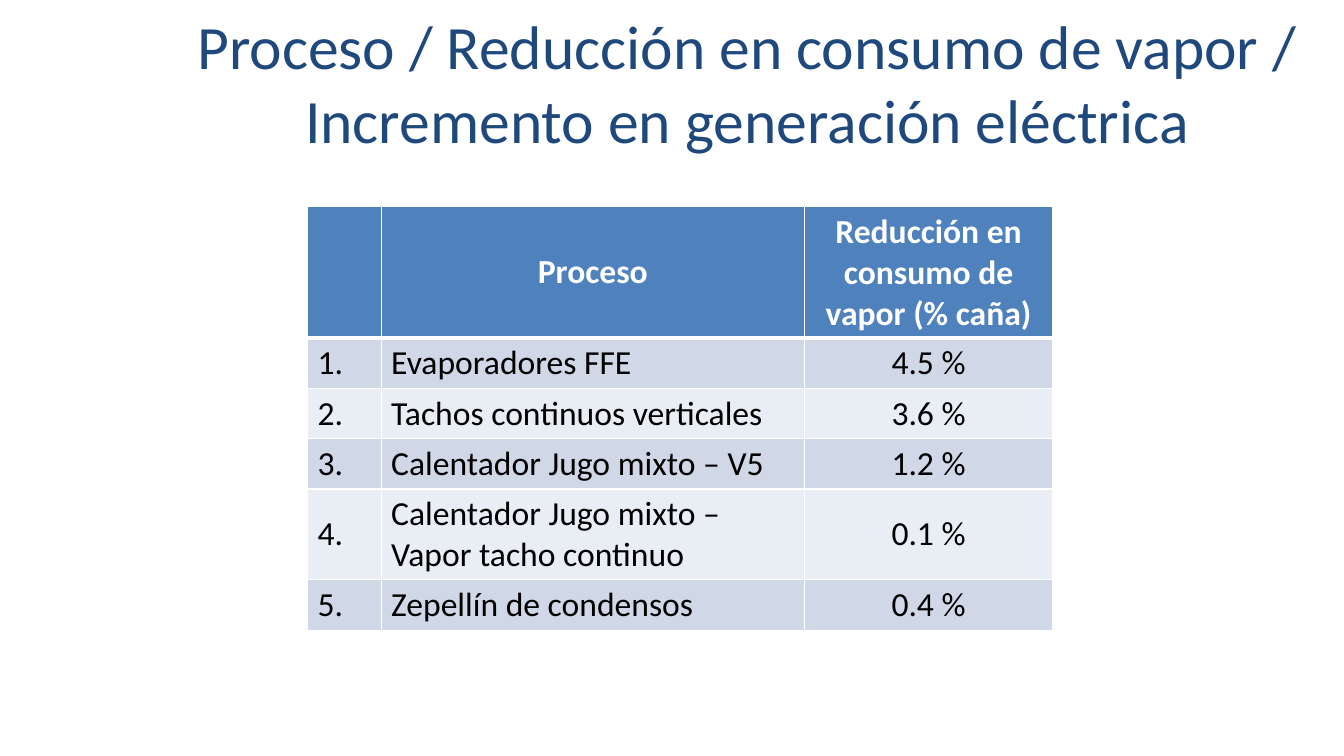
import pptx
import pptx.dml.color
import pptx.enum.text
import pptx.oxml
import pptx.oxml.ns
import pptx.util

SLIDE_WIDTH, SLIDE_HEIGHT = 13.33, 7.5
FONT = "Calibri"
WHITE, BLACK, NAVY, BLUE = "FFFFFF", "000000", "1F497D", "4F81BD"
BANDS = ["D0D8E8", "E9EDF4"]
CENTER = pptx.enum.text.PP_ALIGN.CENTER
LEFT = pptx.enum.text.PP_ALIGN.LEFT

COLUMN_WIDTHS = [0.73, 4.2, 2.46]
ALIGNMENTS = [LEFT, LEFT, CENTER]
HEADINGS = ["", "Proceso", "Reducción en consumo de vapor (% caña)"]
HEADING_HEIGHT = 1.3
# Process, steam reduction, row height
PROCESSES = [
    ("Evaporadores FFE", "4.5 %", 0.5),
    ("Tachos continuos verticales", "3.6 %", 0.5),
    ("Calentador Jugo mixto – V5", "1.2 %", 0.5),
    ("Calentador Jugo mixto – Vapor tacho continuo", "0.1 %", 0.9),
    ("Zepellín de condensos", "0.4 %", 0.5),
]


def color(hex_string):
    return pptx.dml.color.RGBColor.from_string(hex_string)


def write(frame, text, size, hex_color, align, bold=False):
    paragraph = frame.paragraphs[0]
    paragraph.text = text
    paragraph.alignment = align
    paragraph.font.name = FONT
    paragraph.font.size = pptx.util.Pt(size)
    paragraph.font.bold = bold
    paragraph.font.color.rgb = color(hex_color)


def add_title(slide, text):
    title = slide.shapes.add_textbox(
        *map(pptx.util.Inches, (1.65, 0.03, 11.53, 1.58)))
    title.text_frame.word_wrap = True
    write(title.text_frame, text, 44, NAVY, CENTER)


def set_borders(cell, top, bottom):
    """Draw white borders: 1 pt at the sides, given points above and below."""
    properties = cell._tc.get_or_add_tcPr()
    for side, points in zip("LRTB", (1, 1, top, bottom)):
        properties.append(pptx.oxml.parse_xml(
            f'<a:ln{side} {pptx.oxml.ns.nsdecls("a")} w="{pptx.util.Pt(points)}">'
            f'<a:solidFill><a:srgbClr val="{WHITE}"/></a:solidFill></a:ln{side}>'))


def fill_row(table, index, height, texts, alignments, fill, font_color,
             top=1, bottom=1, bold=False):
    table.rows[index].height = pptx.util.Inches(height)
    for cell, text, align in zip(table.rows[index].cells, texts, alignments):
        set_borders(cell, top, bottom)
        cell.fill.solid()
        cell.fill.fore_color.rgb = color(fill)
        cell.vertical_anchor = pptx.enum.text.MSO_ANCHOR.MIDDLE
        write(cell.text_frame, text, 24, font_color, align, bold)


def add_process_table(slide):
    total_height = HEADING_HEIGHT + sum(height for *_, height in PROCESSES)
    table = slide.shapes.add_table(
        len(PROCESSES) + 1, len(COLUMN_WIDTHS),
        *map(pptx.util.Inches, (3.05, 2.05, sum(COLUMN_WIDTHS), total_height))).table
    for column, width in zip(table.columns, COLUMN_WIDTHS):
        column.width = pptx.util.Inches(width)

    fill_row(table, 0, HEADING_HEIGHT, HEADINGS, [CENTER] * 3, BLUE, WHITE,
             bottom=3, bold=True)
    for number, (process, reduction, height) in enumerate(PROCESSES, 1):
        fill_row(table, number, height, [f"{number}.", process, reduction],
                 ALIGNMENTS, BANDS[(number - 1) % 2], BLACK,
                 top=3 if number == 1 else 1)


def main():
    deck = pptx.Presentation()
    deck.slide_width = pptx.util.Inches(SLIDE_WIDTH)
    deck.slide_height = pptx.util.Inches(SLIDE_HEIGHT)
    slide = deck.slides.add_slide(deck.slide_layouts[6])
    add_title(slide, "Proceso / Reducción en consumo de vapor / "
                     "Incremento en generación eléctrica")
    add_process_table(slide)
    deck.save("out.pptx")


if __name__ == "__main__":
    main()
